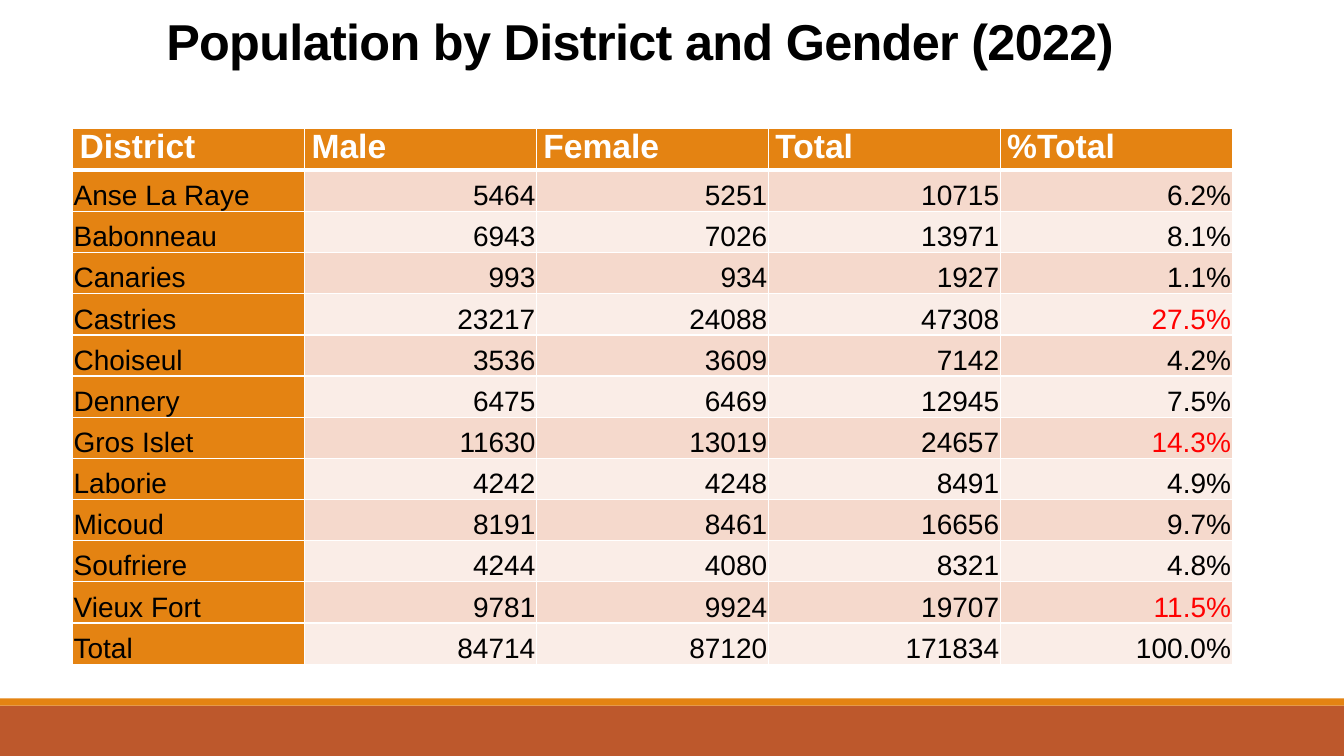
from lxml import etree
from pptx import Presentation
from pptx import util as u
from pptx.dml.color import RGBColor
from pptx.enum import shapes, text
from pptx.oxml.ns import qn

ORANGE, RUST, WHITE, BLACK, RED = "E48312", "BD582C", "FFFFFF", "000000", "FF0000"
BANDS = ["F5D9CC", "FAEDE7"]


def paint(part, color):
    part.fill.solid()
    part.fill.fore_color.rgb = RGBColor.from_string(color)


def write(frame, words, size, color, align, bold=False, line_spacing=1.0, tracking=0):
    paragraph = frame.paragraphs[0]
    paragraph.alignment = align
    paragraph.line_spacing = line_spacing
    run = paragraph.add_run()
    run.text = words
    run.font.name = "Arial"
    run.font.size = u.Pt(size)
    run.font.bold = bold
    run.font.color.rgb = RGBColor.from_string(color)
    if tracking:
        run.font._element.set("spc", str(tracking))


presentation = Presentation()
presentation.slide_width = u.Inches(13.33)
presentation.slide_height = u.Inches(7.5)
slide = presentation.slides.add_slide(presentation.slide_layouts[6])

for top, height, color in [(7, 0.5, RUST), (6.93, 0.07, ORANGE)]:
    footer_band = slide.shapes.add_shape(
        shapes.MSO_SHAPE.RECTANGLE, 0, u.Inches(top), u.Inches(13.33), u.Inches(height))
    footer_band.shadow.inherit = False
    footer_band.line.fill.background()
    paint(footer_band, color)

title = slide.shapes.add_textbox(
    u.Inches(1.47), u.Inches(0.1), u.Inches(9.75), u.Inches(0.7)).text_frame
title.word_wrap = True
title.vertical_anchor = text.MSO_ANCHOR.MIDDLE
write(title, "Population by District and Gender (2022)", 36, BLACK,
      text.PP_ALIGN.CENTER, bold=True, line_spacing=0.85, tracking=-50)

population = [
    ("District", "Male", "Female", "Total", "%Total"),
    ("Anse La Raye", "5464", "5251", "10715", "6.2%"),
    ("Babonneau", "6943", "7026", "13971", "8.1%"),
    ("Canaries", "993", "934", "1927", "1.1%"),
    ("Castries", "23217", "24088", "47308", "27.5%"),
    ("Choiseul", "3536", "3609", "7142", "4.2%"),
    ("Dennery", "6475", "6469", "12945", "7.5%"),
    ("Gros Islet", "11630", "13019", "24657", "14.3%"),
    ("Laborie", "4242", "4248", "8491", "4.9%"),
    ("Micoud", "8191", "8461", "16656", "9.7%"),
    ("Soufriere", "4244", "4080", "8321", "4.8%"),
    ("Vieux Fort", "9781", "9924", "19707", "11.5%"),
    ("Total", "84714", "87120", "171834", "100.0%"),
]
largest_shares = {"27.5%", "14.3%", "11.5%"}

districts = slide.shapes.add_table(
    len(population), len(population[0]),
    u.Inches(0.72), u.Inches(1.27), u.Inches(11.5), u.Inches(5.32)).table
for column in districts.columns:
    column.width = u.Inches(2.3)

for row, record in enumerate(population):
    header = row == 0
    districts.rows[row].height = u.Inches(0.42 if header else 4.9 / 12)
    for col, value in enumerate(record):
        cell = districts.cell(row, col)
        cell.margin_left = cell.margin_right = u.Inches(0.07 if header else 0.01)
        cell.margin_top = u.Inches(0 if header else 0.01)
        cell.margin_bottom = 0
        cell.vertical_anchor = text.MSO_ANCHOR.TOP if header else text.MSO_ANCHOR.BOTTOM

        for side in ("lnL", "lnR", "lnT", "lnB"):
            thick = (row, side) in [(0, "lnB"), (1, "lnT")]
            border = etree.SubElement(cell._tc.get_or_add_tcPr(), qn("a:" + side),
                                      w=str(u.Pt(3 if thick else 1)))
            border_fill = etree.SubElement(border, qn("a:solidFill"))
            etree.SubElement(border_fill, qn("a:srgbClr"), val=WHITE)
        paint(cell, ORANGE if header or col == 0 else BANDS[(row - 1) % 2])

        if header:
            write(cell.text_frame, value, 24, WHITE, text.PP_ALIGN.JUSTIFY, bold=True)
        else:
            write(cell.text_frame, value, 20, RED if value in largest_shares else BLACK,
                  text.PP_ALIGN.RIGHT if col else text.PP_ALIGN.LEFT)

presentation.save("out.pptx")
